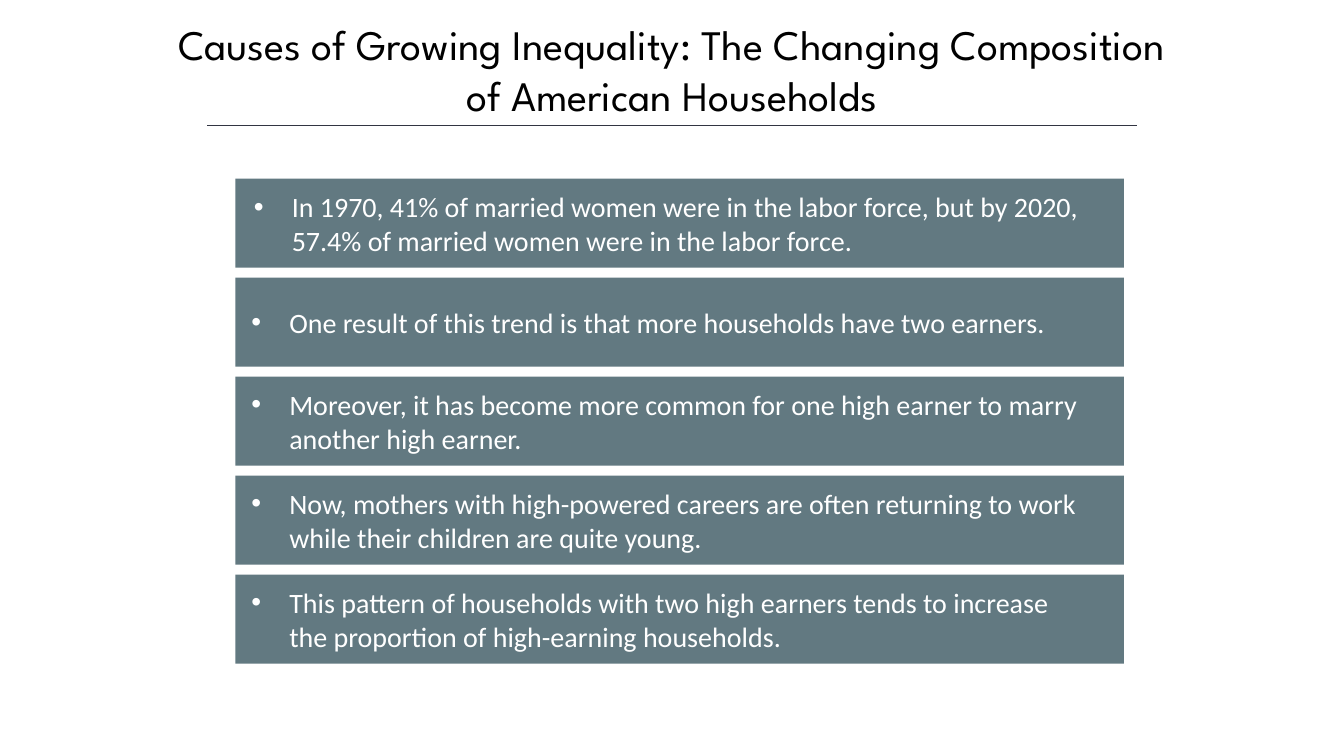
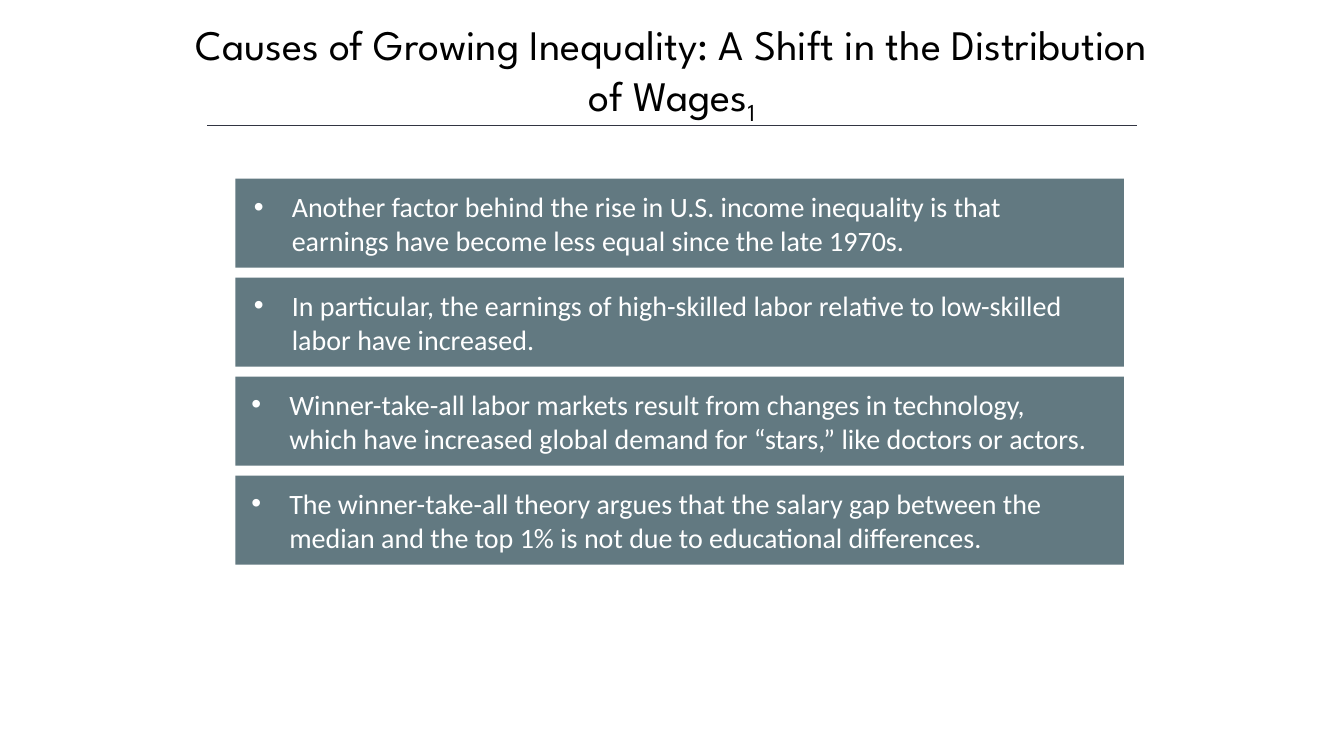
from lxml import etree
from pptx import Presentation
from pptx.dml.color import RGBColor
from pptx.enum.shapes import MSO_CONNECTOR, MSO_SHAPE
from pptx.enum.text import MSO_ANCHOR, PP_ALIGN
from pptx.oxml.ns import qn
from pptx.util import Pt

RECT = MSO_SHAPE.RECTANGLE
LINE = MSO_CONNECTOR.STRAIGHT
TOP, MID = MSO_ANCHOR.TOP, MSO_ANCHOR.MIDDLE
LEFT, CENTER = PP_ALIGN.LEFT, PP_ALIGN.CENTER

COLORS = {"title": "000000", "rule": "323542", "band": "627981", "text": "FFFFFF"}
HEAD, BODY = "League Spartan", "Calibri"

# Band grid and text insets
BAND_X, BAND_Y, BAND_W, BAND_H = 168.2, 127.7, 634.6, 63.5
PITCH = 70.7
WIDE, SLIM = 13.2, 11.4
TEXT_W = 600.5
INDENT = 27

# Each slide: title, subscript, bands as (left inset, text)
SLIDES = [
    ("Causes of Growing Inequality: The Changing Composition of American Households", "", [
        (WIDE, "In 1970, 41% of married women were in the labor force, but by 2020, 57.4% of married women were in the labor force."),
        (SLIM, "One result of this trend is that more households have two earners."),
        (SLIM, "Moreover, it has become more common for one high earner to marry another high earner."),
        (SLIM, "Now, mothers with high-powered careers are often returning to work while their children are quite young."),
        (SLIM, "This pattern of households with two high earners tends to increase the proportion of high-earning households."),
    ]),
    ("Causes of Growing Inequality: A Shift in the Distribution of Wages", "1", [
        (WIDE, "Another factor behind the rise in U.S. income inequality is that earnings have become less equal since the late 1970s."),
        (WIDE, "In particular, the earnings of high-skilled labor relative to low-skilled labor have increased."),
        (SLIM, "Winner-take-all labor markets result from changes in technology, which have increased global demand for “stars,” like doctors or actors."),
        (SLIM, "The winner-take-all theory argues that the salary gap between the median and the top 1% is not due to educational differences."),
    ]),
]


def color(name):
    return RGBColor.from_string(COLORS[name])


def style(para, face, size, name, align):
    para.alignment = align
    for run in para.runs:
        run.font.name = face
        run.font.size = Pt(size)
        run.font.color.rgb = color(name)


prs = Presentation()
prs.slide_width, prs.slide_height = Pt(960), Pt(540)

for title, sub, bands in SLIDES:
    slide = prs.slides.add_slide(prs.slide_layouts[6])
    shapes = slide.shapes

    # Title
    frame = shapes.add_textbox(Pt(120), Pt(10), Pt(720), Pt(80)).text_frame
    frame.word_wrap = True
    frame.vertical_anchor = TOP
    frame.text = title
    para = frame.paragraphs[0]
    if sub:
        run = para.add_run()
        run.text = sub
        run._r.get_or_add_rPr().set("baseline", "-25000")
    style(para, HEAD, 30, "title", CENTER)

    # Rule under the title
    rule = shapes.add_connector(LINE, Pt(148), Pt(89.5), Pt(812), Pt(89.5))
    rule.line.color.rgb = color("rule")
    rule.line.width = Pt(1)
    etree.SubElement(rule._element.spPr, qn("a:effectLst"))

    # Bulleted bands
    for row, (inset, text) in enumerate(bands):
        band = shapes.add_shape(RECT, Pt(BAND_X), Pt(BAND_Y + row * PITCH), Pt(BAND_W), Pt(BAND_H))
        band.shadow.inherit = False
        band.fill.solid()
        band.fill.fore_color.rgb = color("band")
        band.line.fill.background()
        frame = band.text_frame
        frame.word_wrap = True
        frame.vertical_anchor = MID
        frame.margin_left = Pt(inset)
        frame.margin_right = Pt(BAND_W - TEXT_W - inset)
        frame.text = text
        para = frame.paragraphs[0]
        props = para._p.get_or_add_pPr()
        props.set("marL", str(Pt(INDENT)))
        props.set("indent", str(-Pt(INDENT)))
        etree.SubElement(props, qn("a:buFont")).set("typeface", "Arial")
        etree.SubElement(props, qn("a:buChar")).set("char", "•")
        style(para, BODY, 20, "text", LEFT)

prs.save("out.pptx")
